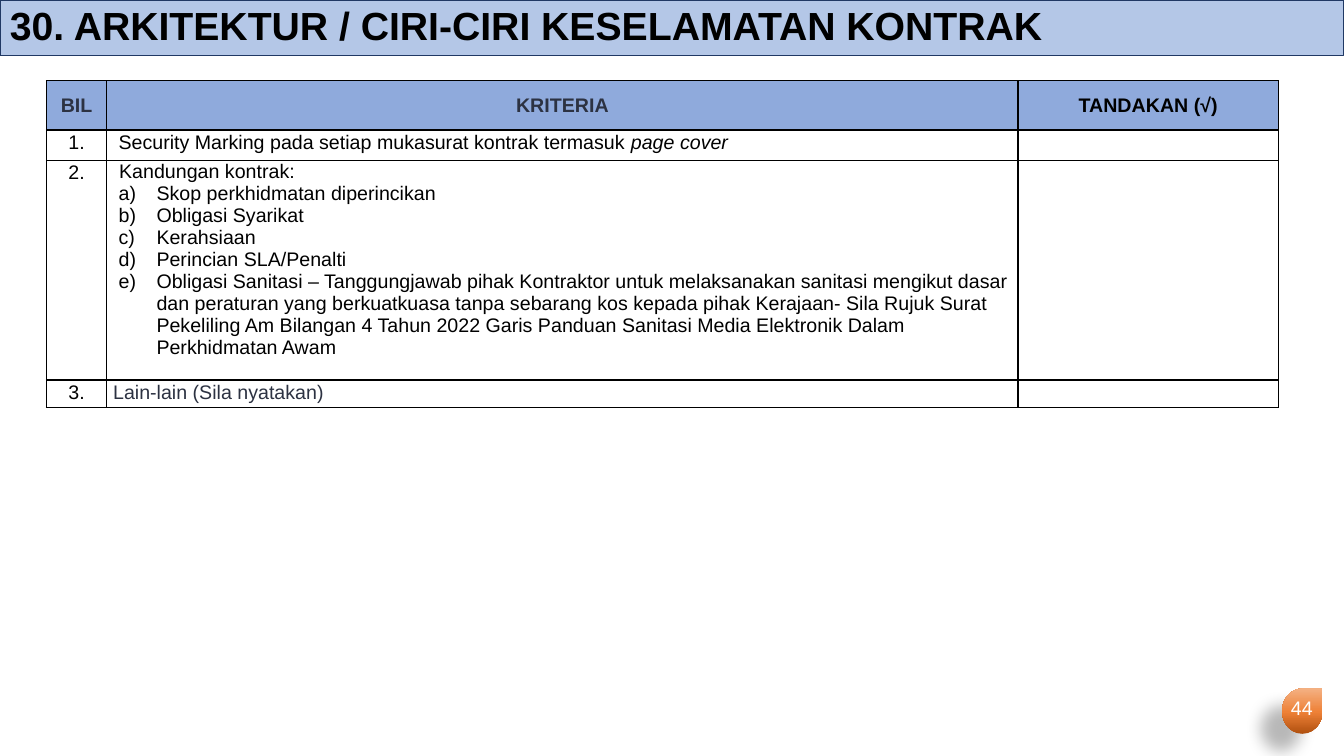
"""Build the contract security checklist slide."""
from dataclasses import dataclass

import lxml.etree
import pptx
import pptx.dml.color
import pptx.enum.shapes
import pptx.enum.text
import pptx.oxml
import pptx.oxml.ns
import pptx.shapes.autoshape
import pptx.slide
import pptx.table
import pptx.text.text
import pptx.util

Pt = pptx.util.Pt
Align = pptx.enum.text.PP_ALIGN
Anchor = pptx.enum.text.MSO_ANCHOR
Shape = pptx.enum.shapes.MSO_SHAPE
SPACE = pptx.oxml.ns.nsdecls("a")
COLORS = {
    "black": "000000", "white": "FFFFFF", "slate": "2C3242",
    "band": "B4C7E7", "navy": "203864", "head": "8FAADC",
    "rust": "B0500F", "orange": "EE8137", "peach": "F4B183",
}
COLS = (43.2, 650.88, 185.9)
ROWS = (35.28, 21.6, 156.96, 19.44)


@dataclass
class Line:
    text: str = ""
    tail: str = ""
    color: str = "black"
    bold: bool = False
    center: bool = False
    left: float = 0
    hang: float = 0
    ratio: float | None = 1.07
    after: float = 8


def head(text: str, color: str) -> list[Line]:
    return [Line(text, color=color, bold=True, center=True)]


def count(text: str) -> list[Line]:
    return [Line(text, center=True)]


def item(text: str) -> Line:
    return Line(text, left=31, hang=27, ratio=None, after=0)


GRID = [
    [head("BIL", "slate"), head("KRITERIA", "slate"), head("TANDAKAN (√)", "black")],
    [count("1."),
     [Line(" Security Marking pada setiap mukasurat kontrak termasuk ", "page cover")],
     [Line()]],
    [count("2."),
     [Line("Kandungan kontrak:", left=4.3, ratio=None, after=0),
      item("Skop perkhidmatan diperincikan"),
      item("Obligasi Syarikat"),
      item("Kerahsiaan"),
      item("Perincian SLA/Penalti"),
      item("Obligasi Sanitasi – Tanggungjawab pihak Kontraktor untuk melaksanakan "
           "sanitasi mengikut dasar dan peraturan yang berkuatkuasa tanpa sebarang kos "
           "kepada pihak Kerajaan- Sila Rujuk Surat Pekeliling Am Bilangan 4 Tahun 2022 "
           "Garis Panduan Sanitasi Media Elektronik Dalam Perkhidmatan Awam")],
     [Line()]],
    [count("3."), [Line("Lain-lain (Sila nyatakan)", color="slate")], [Line()]],
]


def tint(name: str) -> pptx.dml.color.RGBColor:
    return pptx.dml.color.RGBColor.from_string(COLORS[name])


def node(xml: str) -> lxml.etree._Element:
    return pptx.oxml.parse_xml(xml)


def write(frame: pptx.text.text.TextFrame, lines: list[Line], size: float = 14) -> None:
    frame.word_wrap = True
    for index, line in enumerate(lines):
        para = frame.add_paragraph() if index else frame.paragraphs[0]
        para.alignment = Align.CENTER if line.center else Align.LEFT
        para.line_spacing = line.ratio
        para.space_after = Pt(line.after)
        font = para.font
        font.name, font.size, font.bold = "Arial", Pt(size), line.bold
        font.color.rgb = tint(line.color)
        if line.text:
            para.add_run().text = line.text
        if line.tail:
            run = para.add_run()
            run.text = line.tail
            run.font.italic = True
        props = para._p.get_or_add_pPr()
        props.set("marL", str(Pt(line.left)))
        props.set("indent", str(-Pt(line.hang)))
        if line.hang:
            mark = node(f'<a:buAutoNum {SPACE} type="alphaLcParenR"/>')
            props.find(pptx.oxml.ns.qn("a:defRPr")).addprevious(mark)


def draw_cell(cell: pptx.table._Cell, lines: list[Line], top: bool) -> None:
    cell.margin_left = cell.margin_right = Pt(4.5)
    cell.margin_top = cell.margin_bottom = 0
    cell.vertical_anchor = Anchor.MIDDLE if top else Anchor.TOP
    props = cell._tc.get_or_add_tcPr()
    for side in "LRTB":
        props.append(node(
            f'<a:ln{side} {SPACE} w="{Pt(1)}"><a:solidFill>'
            f'<a:srgbClr val="{COLORS["black"]}"/></a:solidFill></a:ln{side}>'))
    if top:
        cell.fill.solid()
        cell.fill.fore_color.rgb = tint("head")
    else:
        cell.fill.background()
    write(cell.text_frame, lines)


def draw_table(slide: pptx.slide.Slide) -> None:
    table = slide.shapes.add_table(
        len(ROWS), len(COLS), Pt(33.12), Pt(57.6), Pt(sum(COLS)), Pt(sum(ROWS))).table
    table.first_row = table.horz_banding = False
    for col, width in zip(table.columns, COLS):
        col.width = Pt(width)
    for y, (row, height) in enumerate(zip(table.rows, ROWS)):
        row.height = Pt(height)
        for cell, lines in zip(row.cells, GRID[y]):
            draw_cell(cell, lines, y == 0)


def draw_title(slide: pptx.slide.Slide) -> None:
    band = slide.shapes.add_shape(Shape.RECTANGLE, 0, 0, Pt(960), Pt(39.6))
    band.shadow.inherit = False
    band.fill.solid()
    band.fill.fore_color.rgb = tint("band")
    band.line.color.rgb = tint("navy")
    band.line.width = Pt(0.75)
    band.text_frame.vertical_anchor = Anchor.MIDDLE
    title = Line("30. ARKITEKTUR / CIRI-CIRI KESELAMATAN KONTRAK",
                 bold=True, ratio=0.9, after=0)
    write(band.text_frame, [title], 28)


def draw_badge(slide: pptx.slide.Slide) -> None:
    drop = slide.shapes.add_shape(
        Shape.TEAR, Pt(915.84), Pt(491.76), Pt(28.8), Pt(32.4))
    drop.line.fill.background()
    drop.fill.gradient()
    drop.fill.gradient_angle = 90
    props = drop._element.spPr
    stops = props.find(".//" + pptx.oxml.ns.qn("a:gsLst"))
    stops.clear()
    for spot, name in ((0, "rust"), (48, "orange"), (100, "peach")):
        stops.append(node(f'<a:gs {SPACE} pos="{spot * 1000}">'
                          f'<a:srgbClr val="{COLORS[name]}"/></a:gs>'))
    drop.shadow.inherit = False
    props.find(pptx.oxml.ns.qn("a:effectLst")).append(node(
        f'<a:outerShdw {SPACE} blurRad="{Pt(11.8)}" dist="{Pt(19.7)}" '
        f'dir="{141 * 60000}" rotWithShape="0"><a:srgbClr val="{COLORS["black"]}">'
        '<a:alpha val="28000"/></a:srgbClr></a:outerShdw>'))
    box = slide.shapes.add_textbox(Pt(912.24), Pt(493.92), Pt(35.28), Pt(28.8))
    write(box.text_frame, [Line("44", color="white", center=True, ratio=None, after=0)])


def main() -> None:
    deck = pptx.Presentation()
    deck.slide_width, deck.slide_height = Pt(960), Pt(540)
    slide = deck.slides.add_slide(deck.slide_layouts[6])
    draw_badge(slide)
    draw_title(slide)
    draw_table(slide)
    deck.save("out.pptx")


if __name__ == "__main__":
    main()
